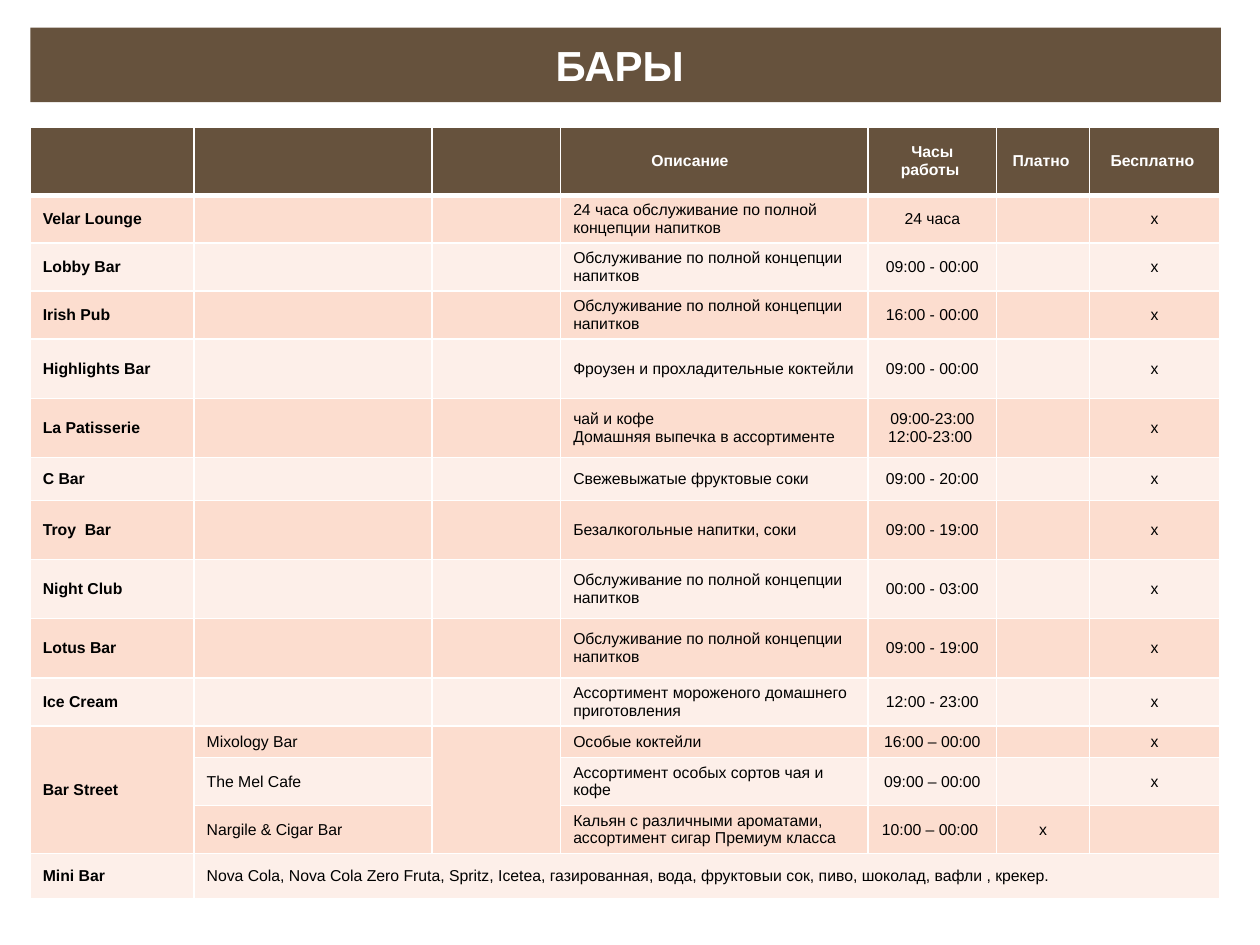
import pptx
import pptx.dml.color
import pptx.enum.shapes
import pptx.enum.text
import pptx.oxml
import pptx.oxml.ns
import pptx.util
from pptx.util import Inches

BROWN, WHITE, BLACK = "66523D", "FFFFFF", "000000"
BANDS = ("FDEFE9", "FCDDCF")
CENTER = pptx.enum.text.PP_ALIGN.CENTER
LEFT = pptx.enum.text.PP_ALIGN.LEFT
MIDDLE = pptx.enum.text.MSO_ANCHOR.MIDDLE

COLUMN_WIDTHS = (1.3, 1.89, 1.02, 2.44, 1.02, 0.74, 1.03)
ROW_HEIGHTS = (0.54, 0.34, 0.35, 0.34, 0.47, 0.47, 0.34, 0.47,
               0.47, 0.47, 0.35, 0.13, 0.13, 0.13, 0.36)
CENTERED_COLUMNS = (4, 5, 6)
FULL_CONCEPT = "Oбслуживание по полной концепции напитков"
HEADERS = ("", "", "", "Описание \t", "Часы работы ", "Платно ", "Бесплатно ")
# Bar, venue, description, hours, paid, free
BARS = (
    ("Velar Lounge", "", "24 часа обслуживание по полной концепции напитков", "24 часа", "", "x"),
    ("Lobby Bar", "", FULL_CONCEPT, "09:00 - 00:00", "", "x"),
    ("Irish Pub", "", FULL_CONCEPT, "16:00 - 00:00", "", "x"),
    ("Highlights Bar", "", "Фроузен и прохладительные коктейли", "09:00 - 00:00", "", "x"),
    ("La Patisserie", "", "чай и кофе\nДомашняя выпечка в ассортименте",
     "09:00-23:00\n12:00-23:00 ", "", "x"),
    ("C Bar", "", "Cвежевыжатые фруктовые соки", "09:00 - 20:00", "", "x"),
    ("Troy  Bar", "", "Безалкогольные напитки, соки", "09:00 - 19:00", "", "x"),
    ("Night Club", "", FULL_CONCEPT, "00:00 - 03:00", "", "x"),
    ("Lotus Bar", "", FULL_CONCEPT, "09:00 - 19:00", "", "x"),
    ("Ice Cream", "", "Ассортимент мороженого домашнего приготовления",
     "12:00 - 23:00", "", "x"),
    ("Bar Street", "Mixology Bar", "Особые коктейли", "16:00 – 00:00", "", "x"),
    ("", "The Mel Cafe", "Ассортимент особых сортов чая и кофе", "09:00 – 00:00", "", "x"),
    ("", "Nargile & Cigar Bar",
     "Кальян с различными ароматами, ассортимент сигар Премиум класса",
     "10:00 – 00:00 ", "x", ""),
    ("Mini Bar",
     "Nova Cola, Nova Cola Zero Fruta, Spritz, Icetea, газированная, вода, "
     "фруктовыи сок, пиво, шоколад, вафли , крекер.", "", "", "", ""),
)
MERGES = ((11, 0, 13, 0), (11, 2, 13, 2), (14, 1, 14, 6))


def rgb(value):
    return pptx.dml.color.RGBColor.from_string(value)


class SlideBuilder:
    """Holds the current slide and its text style."""

    font_name = "Arial"
    table_size = 9

    def __init__(self, slide):
        self.slide = slide

    def format_text(self, text_frame, size, color, bold, alignment):
        for paragraph in text_frame.paragraphs:
            paragraph.alignment = alignment
            for run in paragraph.runs:
                run.font.name = self.font_name
                run.font.size = pptx.util.Pt(size)
                run.font.bold = bold
                run.font.color.rgb = rgb(color)
            if not paragraph.runs:
                # Keeps empty cells from stretching their row
                end = pptx.oxml.parse_xml(
                    f'<a:endParaRPr {pptx.oxml.ns.nsdecls("a")} sz="{size * 100}"/>')
                paragraph._p.append(end)

    def banner(self, text, left, top, width, height):
        shape = self.slide.shapes.add_shape(
            pptx.enum.shapes.MSO_SHAPE.RECTANGLE,
            Inches(left), Inches(top), Inches(width), Inches(height))
        shape.shadow.inherit = False
        shape.fill.solid()
        shape.fill.fore_color.rgb = rgb(BROWN)
        shape.line.fill.background()
        shape.text_frame.text = text
        shape.text_frame.vertical_anchor = MIDDLE
        self.format_text(shape.text_frame, 24, WHITE, True, CENTER)

    def borders(self, cell, top, bottom):
        """Draw white cell borders, 1 pt at the sides."""
        properties = cell._tc.get_or_add_tcPr()
        for side, points in (("L", 1), ("R", 1), ("T", top), ("B", bottom)):
            properties.append(pptx.oxml.parse_xml(
                f'<a:ln{side} {pptx.oxml.ns.nsdecls("a")} w="{pptx.util.Pt(points)}">'
                f'<a:solidFill><a:srgbClr val="{WHITE}"/></a:solidFill></a:ln{side}>'))

    def fill_cell(self, cell, text, row, column):
        header = row == 0
        self.borders(cell, 3 if row == 1 else 1, 3 if header else 1)
        cell.fill.solid()
        cell.fill.fore_color.rgb = rgb(BROWN if header else BANDS[row % 2])
        cell.vertical_anchor = MIDDLE
        cell.text_frame.text = text
        self.format_text(cell.text_frame, self.table_size, WHITE if header else BLACK,
                         header or column == 0,
                         CENTER if header or column in CENTERED_COLUMNS else LEFT)

    def table(self, rows, left, top):
        table = self.slide.shapes.add_table(
            len(rows), len(COLUMN_WIDTHS), Inches(left), Inches(top),
            Inches(sum(COLUMN_WIDTHS)), Inches(sum(ROW_HEIGHTS))).table
        for column, width in zip(table.columns, COLUMN_WIDTHS):
            column.width = Inches(width)
        for row, height in zip(table.rows, ROW_HEIGHTS):
            row.height = Inches(height)
        for row, texts in enumerate(rows):
            for column, text in enumerate(texts):
                self.fill_cell(table.cell(row, column), text, row, column)
        for first_row, first_column, last_row, last_column in MERGES:
            table.cell(first_row, first_column).merge(table.cell(last_row, last_column))


def main():
    presentation = pptx.Presentation()
    presentation.slide_width = Inches(10)
    presentation.slide_height = Inches(7.5)
    builder = SlideBuilder(presentation.slides.add_slide(presentation.slide_layouts[6]))
    builder.banner("БАРЫ ", 0.24, 0.22, 9.45, 0.59)
    # The third column is empty throughout
    rows = [HEADERS] + [(bar, venue, "", *details) for bar, venue, *details in BARS]
    builder.table(rows, 0.24, 1.01)
    presentation.save("out.pptx")


if __name__ == "__main__":
    main()
